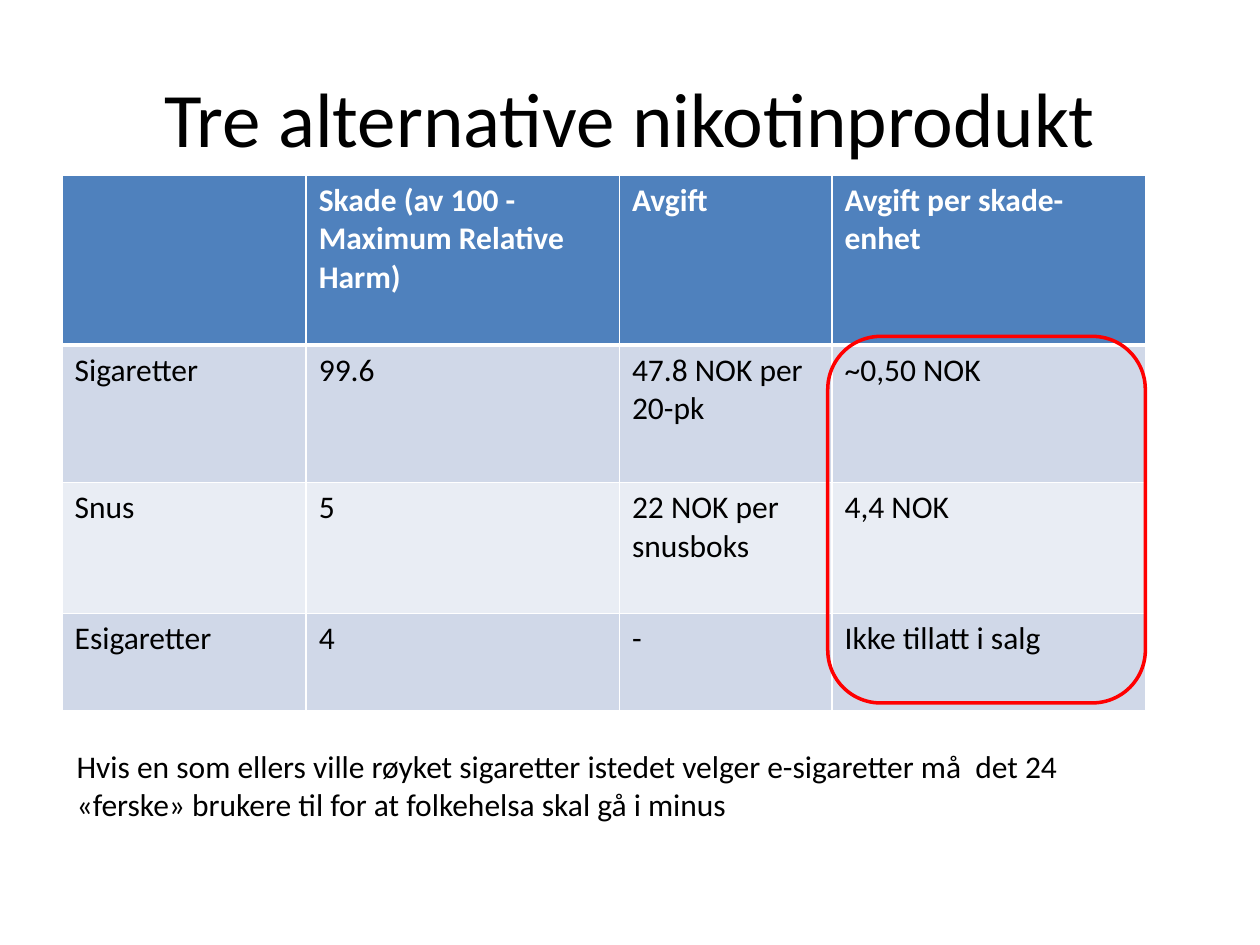
from lxml.etree import SubElement
from pptx import Presentation
from pptx.dml.color import RGBColor
from pptx.enum.shapes import MSO_SHAPE
from pptx.enum.text import MSO_ANCHOR, MSO_AUTO_SIZE, PP_ALIGN
from pptx.oxml.ns import qn
from pptx.util import Pt

FONT = "Calibri"
BLACK, WHITE, RED = "000000", "FFFFFF", "FF0000"
HEADER_FILL = "4F81BD"
BAND_FILLS = ("D0D8E8", "E9EDF4")

COL_WIDTHS = (139.5, 179, 121.5, 179)
ROW_HEIGHTS = (97.2, 78.5, 74.9, 55.4)
ROWS = (
    ("", "Skade (av 100 - Maximum Relative Harm)", "Avgift",
     "Avgift per skade-enhet"),
    ("Sigaretter", "99.6", "47.8 NOK per 20-pk", "~0,50 NOK"),
    ("Snus", "5", "22 NOK per snusboks", "4,4 NOK"),
    ("Esigaretter", "4", "-", "Ikke tillatt i salg"),
)
NOTE = ("Hvis en som ellers ville røyket sigaretter istedet velger "
        "e-sigaretter må  det 24 «ferske» brukere til for at folkehelsa "
        "skal gå i minus")


def rgb(value):
    return RGBColor.from_string(value)


def write(tf, text, size=18, color=BLACK, bold=False, align=PP_ALIGN.LEFT):
    p = tf.paragraphs[0]
    p.alignment = align
    r = p.add_run()
    r.text = text
    r.font.name = FONT
    r.font.size = Pt(size)
    r.font.bold = bold
    r.font.color.rgb = rgb(color)


def set_borders(cell, **widths):
    """Draw white borders; keys are lnL, lnR, lnT, lnB in schema order."""
    tcPr = cell._tc.get_or_add_tcPr()
    for side, width in widths.items():
        ln = SubElement(tcPr, qn(f"a:{side}"), w=str(Pt(width)))
        fill = SubElement(ln, qn("a:solidFill"))
        SubElement(fill, qn("a:srgbClr"), val=WHITE)


def add_title(s, text):
    sp = s.shapes.title
    sp.left, sp.top, sp.width, sp.height = Pt(36), Pt(21.6), Pt(648), Pt(90)
    sp.text_frame.vertical_anchor = MSO_ANCHOR.MIDDLE
    write(sp.text_frame, text, size=44, align=PP_ALIGN.CENTER)


def add_tax_table(s, left, top):
    frame = s.shapes.add_table(len(ROWS), len(COL_WIDTHS), Pt(left), Pt(top),
                               Pt(sum(COL_WIDTHS)), Pt(sum(ROW_HEIGHTS)))
    table = frame.table
    for column, width in zip(table.columns, COL_WIDTHS):
        column.width = Pt(width)
    for i, (height, texts) in enumerate(zip(ROW_HEIGHTS, ROWS)):
        table.rows[i].height = Pt(height)
        header = i == 0
        for j, text in enumerate(texts):
            cell = table.cell(i, j)
            set_borders(cell, lnL=1, lnR=1, lnT=3 if i == 1 else 1,
                        lnB=3 if header else 1)
            cell.fill.solid()
            cell.fill.fore_color.rgb = rgb(
                HEADER_FILL if header else BAND_FILLS[(i - 1) % 2])
            if text:
                write(cell.text_frame, text, bold=header,
                      color=WHITE if header else BLACK)


def add_highlight(s, left, top, width, height):
    sp = s.shapes.add_shape(MSO_SHAPE.ROUNDED_RECTANGLE, Pt(left), Pt(top),
                            Pt(width), Pt(height))
    sp.shadow.inherit = False
    sp.fill.background()
    sp.line.color.rgb = rgb(RED)
    sp.line.width = Pt(2)


def add_note(s, text, left, top, width, height):
    sp = s.shapes.add_textbox(Pt(left), Pt(top), Pt(width), Pt(height))
    tf = sp.text_frame
    tf.word_wrap = True
    tf.auto_size = MSO_AUTO_SIZE.SHAPE_TO_FIT_TEXT
    write(tf, text)


def main():
    prs = Presentation()
    prs.slide_width, prs.slide_height = Pt(720), Pt(540)
    s = prs.slides.add_slide(prs.slide_layouts.get_by_name("Title Only"))
    add_title(s, "Tre alternative nikotinprodukt")
    add_tax_table(s, 35.5, 100)
    add_highlight(s, 473, 192.2, 181.5, 209.5)
    add_note(s, NOTE, 36.7, 423.4, 617.8, 51)
    prs.save("out.pptx")


if __name__ == "__main__":
    main()
